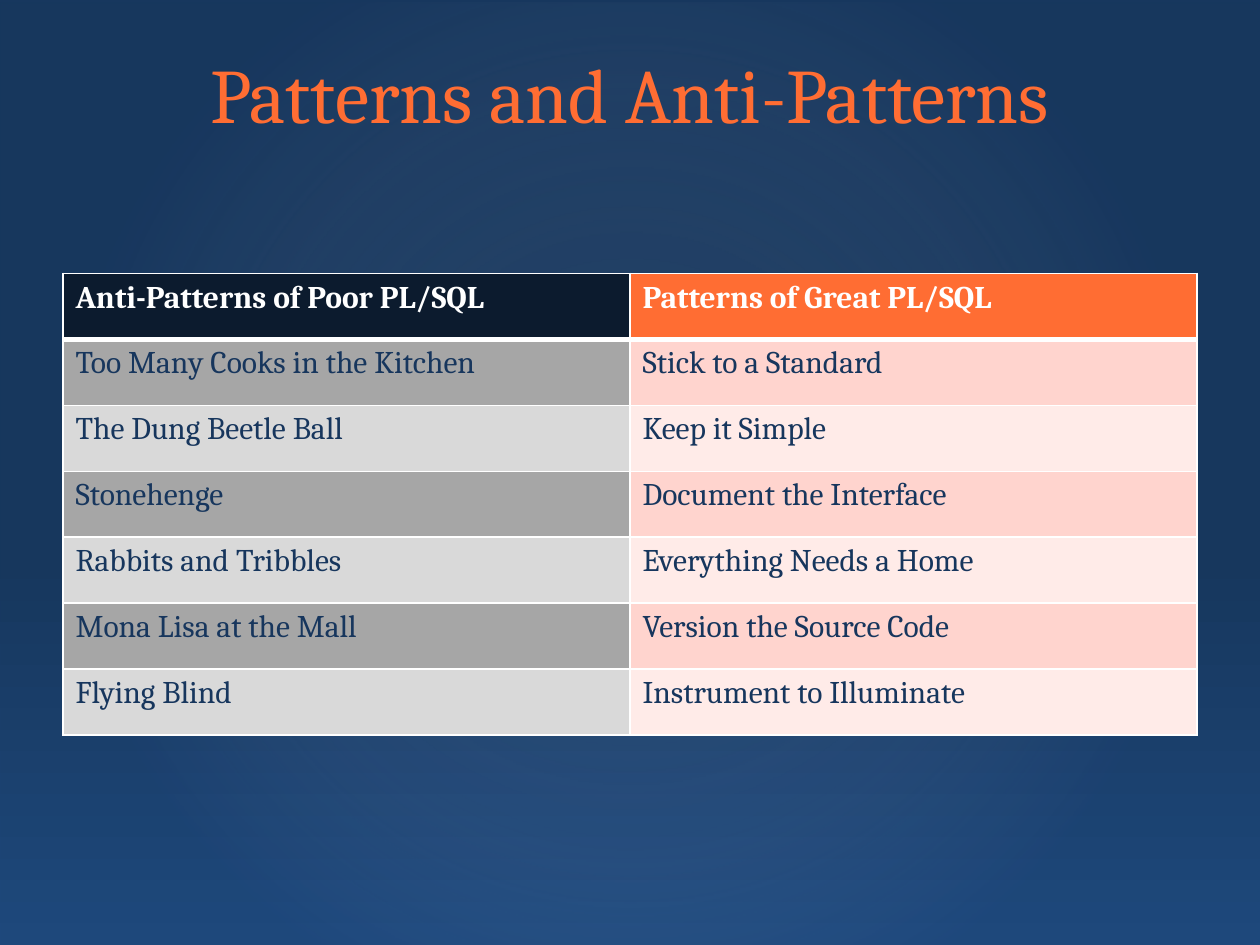
import pptx
import pptx.dml.color
import pptx.enum.shapes
import pptx.enum.text
import pptx.oxml
import pptx.oxml.ns
import pptx.util
from pptx.util import Cm

FONT = "Cambria"
NAVY = "17365D"
ORANGE = "FF6D33"
WHITE = "FFFFFF"
HEADER_FILLS = ("0C1B2E", ORANGE)
BAND_FILLS = (("A6A6A6", "FFD4CE"), ("D9D9D9", "FFEBE8"))
PATTERN_PAIRS = (
    ("Anti-Patterns of Poor PL/SQL", "Patterns of Great PL/SQL"),
    ("Too Many Cooks in the Kitchen", "Stick to a Standard"),
    ("The Dung Beetle Ball", "Keep it Simple"),
    ("Stonehenge", "Document the Interface"),
    ("Rabbits and Tribbles", "Everything Needs a Home"),
    ("Mona Lisa at the Mall", "Version the Source Code"),
    ("Flying Blind", "Instrument to Illuminate"),
)


def rgb(hex_color):
    return pptx.dml.color.RGBColor.from_string(hex_color)


def xml_element(tag, attributes="", content=""):
    return pptx.oxml.parse_xml(
        f'<a:{tag} {pptx.oxml.ns.nsdecls("a")} {attributes}>{content}</a:{tag}>'
    )


def apply_format(target, values):
    for name, value in values.items():
        setattr(target, name, value)


def write_text(frame, text, size, color, bold=False):
    run = frame.paragraphs[0].add_run()
    run.text = text
    apply_format(run.font, {"name": FONT, "size": pptx.util.Pt(size), "bold": bold})
    run.font.color.rgb = rgb(color)


def set_gradient(fill, stops):
    fill.gradient()
    for stop, (position, color) in zip(fill.gradient_stops, stops):
        stop.position = position
        stop.color.rgb = rgb(color)


def paint_background(slide):
    fill = slide.background.fill
    set_gradient(fill, ((0.59, "17375E"), (1, "204C83")))
    fill.gradient_angle = 270


def add_glow(slide, width, height):
    glow = slide.shapes.add_shape(
        pptx.enum.shapes.MSO_SHAPE.RECTANGLE, 0, Cm(0.05), width, height
    )
    glow.shadow.inherit = False
    glow.line.fill.background()
    set_gradient(glow.fill, ((0, WHITE), (0.72, NAVY)))
    gradient = glow._element.spPr.find(pptx.oxml.ns.qn("a:gradFill"))
    for color, alpha in zip(gradient.iter(pptx.oxml.ns.qn("a:srgbClr")), (0, 17000)):
        color.append(xml_element("alpha", f'val="{alpha}"'))
    center = '<a:fillToRect l="50000" t="50000" r="50000" b="50000"/>'
    gradient.replace(
        gradient.find(pptx.oxml.ns.qn("a:lin")),
        xml_element("path", 'path="circle"', center),
    )


def add_title(slide, text):
    title = slide.shapes.add_textbox(Cm(1.27), Cm(0.76), Cm(22.86), Cm(2.21))
    frame = title.text_frame
    apply_format(frame, {
        "word_wrap": True,
        "vertical_anchor": pptx.enum.text.MSO_ANCHOR.MIDDLE,
    })
    frame.paragraphs[0].alignment = pptx.enum.text.PP_ALIGN.CENTER
    write_text(frame, text, 44, ORANGE)


def set_borders(cell, widths):
    properties = cell._tc.get_or_add_tcPr()
    line = f'<a:solidFill><a:srgbClr val="{WHITE}"/></a:solidFill>'
    for index, (side, width) in enumerate(widths.items()):
        border = xml_element(f"ln{side}", f'w="{pptx.util.Pt(width)}"', line)
        properties.insert(index, border)


def add_pattern_table(slide):
    row_count = len(PATTERN_PAIRS)
    row_height = Cm(1.33)
    table = slide.shapes.add_table(
        row_count, 2, Cm(1.27), Cm(5.51), Cm(22.86), row_height * row_count
    ).table
    for row_index, pair in enumerate(PATTERN_PAIRS):
        table.rows[row_index].height = row_height
        is_header = row_index == 0
        fills = HEADER_FILLS if is_header else BAND_FILLS[(row_index - 1) % 2]
        widths = {
            "L": 1,
            "R": 1,
            "T": 3 if row_index == 1 else 1,
            "B": 3 if is_header else 1,
        }
        for column_index, (text, color) in enumerate(zip(pair, fills)):
            cell = table.cell(row_index, column_index)
            cell.fill.solid()
            cell.fill.fore_color.rgb = rgb(color)
            set_borders(cell, widths)
            write_text(cell.text_frame, text, 18, WHITE if is_header else NAVY, is_header)


def main():
    deck = pptx.Presentation()
    apply_format(deck, {"slide_width": Cm(25.4), "slide_height": Cm(19.05)})
    slide = deck.slides.add_slide(deck.slide_layouts[6])
    paint_background(slide)
    add_glow(slide, deck.slide_width, deck.slide_height)
    add_title(slide, "Patterns and Anti-Patterns")
    add_pattern_table(slide)
    deck.save("out.pptx")


if __name__ == "__main__":
    main()
